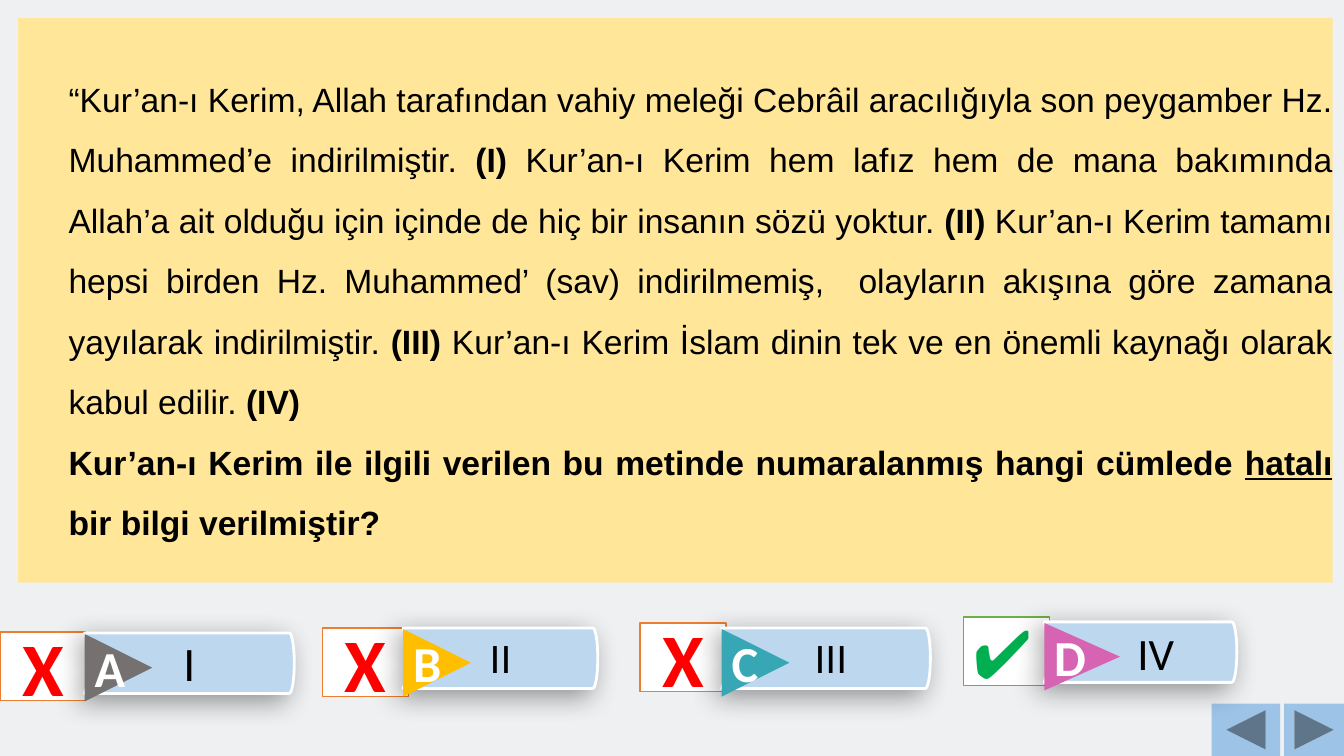
from dataclasses import dataclass
from math import cos, pi, sin

from lxml.etree import SubElement
from pptx import Presentation
from pptx.dml.color import RGBColor
from pptx.enum.shapes import MSO_SHAPE as Form
from pptx.enum.text import MSO_ANCHOR as Anchor, PP_ALIGN as Align
from pptx.oxml.ns import qn
from pptx.shapes.autoshape import Shape
from pptx.slide import Slide
from pptx.util import Inches, Length, Pt

WIDE, HIGH = Inches(13.33), Inches(7.5)


@dataclass(frozen=True)
class Theme:
    back: str = "EEF0F2"
    panel: str = "FFE699"
    button: str = "9DC3E6"
    ribbon: str = "BDD7EE"
    white: str = "FFFFFF"
    ink: str = "000000"
    wrong: str = "FF0000"
    right: str = "00B050"
    wrong_edge: str = "ED7D31"
    right_edge: str = "70AD47"
    body: str = "Arial"
    head: str = "Calibri"
    text: int = 24
    letter: int = 36
    cross: int = 54
    check: int = 48


@dataclass(frozen=True)
class Box:
    """A place on the slide, in percent of its width and height."""
    x: float
    y: float
    w: float
    h: float

    def frame(self) -> tuple[Length, Length, Length, Length]:
        return across(self.x), down(self.y), across(self.w), down(self.h)


@dataclass(frozen=True)
class Choice:
    letter: str
    label: str
    color: str
    mark: Box
    ribbon: Box
    size: int
    font: str = "Arial"
    tip: float = 5.03
    shift: float = 0
    right: bool = False


@dataclass(frozen=True)
class Part:
    text: str
    bold: bool = False
    line: bool = False


THEME = Theme()
MARK_W, MARK_H, BAND_H, TIP_H = 6.38, 9.07, 8, 8.93

QUESTION = [
    [
        Part("“Kur’an-ı Kerim, Allah tarafından vahiy meleği Cebrâil aracılığıyla "
             "son peygamber Hz. Muhammed’e indirilmiştir. "),
        Part("(I) ", True),
        Part("Kur’an-ı Kerim hem lafız hem de mana bakımında Allah’a ait olduğu "
             "için içinde de hiç bir insanın sözü yoktur. "),
        Part("(II) ", True),
        Part("Kur’an-ı Kerim tamamı hepsi birden Hz. Muhammed’ (sav) indirilmemiş,  "
             "olayların akışına göre zamana yayılarak indirilmiştir. "),
        Part("(III) ", True),
        Part("Kur’an-ı Kerim İslam dinin tek ve en önemli kaynağı olarak "
             "kabul edilir. "),
        Part("(IV)", True),
    ],
    [
        Part("Kur’an-ı Kerim ile ilgili verilen bu metinde numaralanmış "
             "hangi cümlede ", True),
        Part("hatalı ", True, True),
        Part("bir bilgi verilmiştir?", True),
    ],
]

CHOICES = [
    Choice("A", "I", "767171", Box(0, 83.6, MARK_W, MARK_H),
           Box(6.3, 83.73, 15.6, BAND_H), 32),
    Choice("B", "II", "FFBF00", Box(24, 83.07, MARK_W, MARK_H),
           Box(30, 83.07, 14.48, BAND_H), 28),
    Choice("C", "III", "38A7B5", Box(47.63, 82.4, MARK_W, MARK_H),
           Box(53.7, 83.07, 15.53, BAND_H), 28, shift=0.7),
    Choice("D", "IV", "D764B3", Box(71.7, 81.6, MARK_W, MARK_H),
           Box(77.7, 82.27, 14.33, BAND_H), 32, "Calibri", 5.63, 2.25, True),
]

BUTTONS = [
    (Form.ACTION_BUTTON_BACK_OR_PREVIOUS, Box(90.15, 93.07, 5.1, 6.93)),
    (Form.ACTION_BUTTON_FORWARD_OR_NEXT, Box(95.55, 93.07, 4.45, 6.93)),
]


def across(share: float) -> Length:
    return Length(round(WIDE * share / 100))


def down(share: float) -> Length:
    return Length(round(HIGH * share / 100))


def paint(shape: Shape, fill: str, edge: str = "", width: float = 1) -> None:
    shape.shadow.inherit = False
    shape.fill.solid()
    shape.fill.fore_color.rgb = RGBColor.from_string(fill)
    if edge:
        shape.line.color.rgb = RGBColor.from_string(edge)
        shape.line.width = Pt(width)
    else:
        shape.line.fill.background()


def write(shape: Shape, text: str, size: int, font: str, color: str,
          bold: bool = False, align: Align = Align.CENTER) -> None:
    frame = shape.text_frame
    frame.text = text
    frame.word_wrap = True
    frame.vertical_anchor = Anchor.MIDDLE
    para = frame.paragraphs[0]
    para.alignment = align
    face = para.runs[0].font
    face.size, face.name, face.bold = Pt(size), font, bold
    face.color.rgb = RGBColor.from_string(color)


def cast(shape: Shape) -> None:
    """Give the shape a soft shadow down to the left."""
    effects = shape.element.spPr.find(qn("a:effectLst"))
    outer = SubElement(effects, qn("a:outerShdw"), blurRad=str(Pt(20)),
                       dist=str(Pt(7)), dir=str(135 * 60000),
                       algn="tr", rotWithShape="0")
    tint = SubElement(outer, qn("a:srgbClr"), val=THEME.ink)
    SubElement(tint, qn("a:alpha"), val="40000")


def draw_panel(slide: Slide) -> None:
    panel = slide.shapes.add_shape(Form.RECTANGLE, *Box(1.35, 2.4, 97.8, 74.67).frame())
    paint(panel, THEME.panel)
    frame = panel.text_frame
    frame.word_wrap = True
    frame.vertical_anchor = Anchor.MIDDLE
    frame.margin_left = across(3.75)
    frame.margin_top = frame.margin_right = frame.margin_bottom = 0
    for spot, parts in enumerate(QUESTION):
        para = frame.add_paragraph() if spot else frame.paragraphs[0]
        para.alignment = Align.JUSTIFY
        para.line_spacing = 1.5
        for part in parts:
            run = para.add_run()
            run.text = part.text
            face = run.font
            face.size, face.name = Pt(THEME.text), THEME.body
            face.bold, face.underline = part.bold, part.line
            face.color.rgb = RGBColor.from_string(THEME.ink)


def draw_mark(slide: Slide, pick: Choice) -> None:
    mark = slide.shapes.add_shape(Form.RECTANGLE, *pick.mark.frame())
    paint(mark, THEME.white, THEME.right_edge if pick.right else THEME.wrong_edge)
    if pick.right:
        write(mark, "✔", THEME.check, THEME.head, THEME.right, align=Align.LEFT)
    else:
        write(mark, "X", THEME.cross, THEME.head, THEME.wrong, True)


def draw_ribbon(slide: Slide, pick: Choice) -> None:
    """Draw a band with a notch on the left and a round end on the right."""
    left, top, wide, high = pick.ribbon.frame()
    bulge, notch, half, steps = across(0.38), across(0.75), high / 2, 24
    turns = [pi * step / steps - pi / 2 for step in range(steps + 1)]
    bend = [(left + wide - bulge + bulge * cos(turn), top + half + half * sin(turn))
            for turn in turns]
    path = slide.shapes.build_freeform(left, top)
    path.add_line_segments([*bend, (left, top + high), (left + notch, top + half)])
    band = path.convert_to_shape()
    paint(band, THEME.ribbon, THEME.white, 2)
    cast(band)
    write(band, pick.label, pick.size, pick.font, THEME.ink)
    band.text_frame.margin_left += across(pick.shift)


def draw_tip(slide: Slide, pick: Choice) -> None:
    """Draw the lettered triangle, turned to point right with upright text."""
    left, top = across(pick.ribbon.x), down(pick.ribbon.y + 0.13)
    wide, high = across(pick.tip), down(TIP_H)
    lean = (wide - high) // 2
    tip = slide.shapes.add_shape(Form.ISOSCELES_TRIANGLE, left + lean, top - lean,
                                 high, wide)
    tip.rotation = 90
    paint(tip, pick.color)
    write(tip, pick.letter, THEME.letter, THEME.head, THEME.white, True)
    tip.element.txBody.find(qn("a:bodyPr")).set("vert", "vert270")


def main() -> None:
    deck = Presentation()
    deck.slide_width, deck.slide_height = WIDE, HIGH
    slide = deck.slides.add_slide(deck.slide_layouts[6])
    slide.background.fill.solid()
    slide.background.fill.fore_color.rgb = RGBColor.from_string(THEME.back)
    draw_panel(slide)
    for form, box in BUTTONS:
        paint(slide.shapes.add_shape(form, *box.frame()), THEME.button)
    for pick in CHOICES:
        draw_mark(slide, pick)
        draw_ribbon(slide, pick)
        draw_tip(slide, pick)
    deck.save("out.pptx")


if __name__ == "__main__":
    main()
